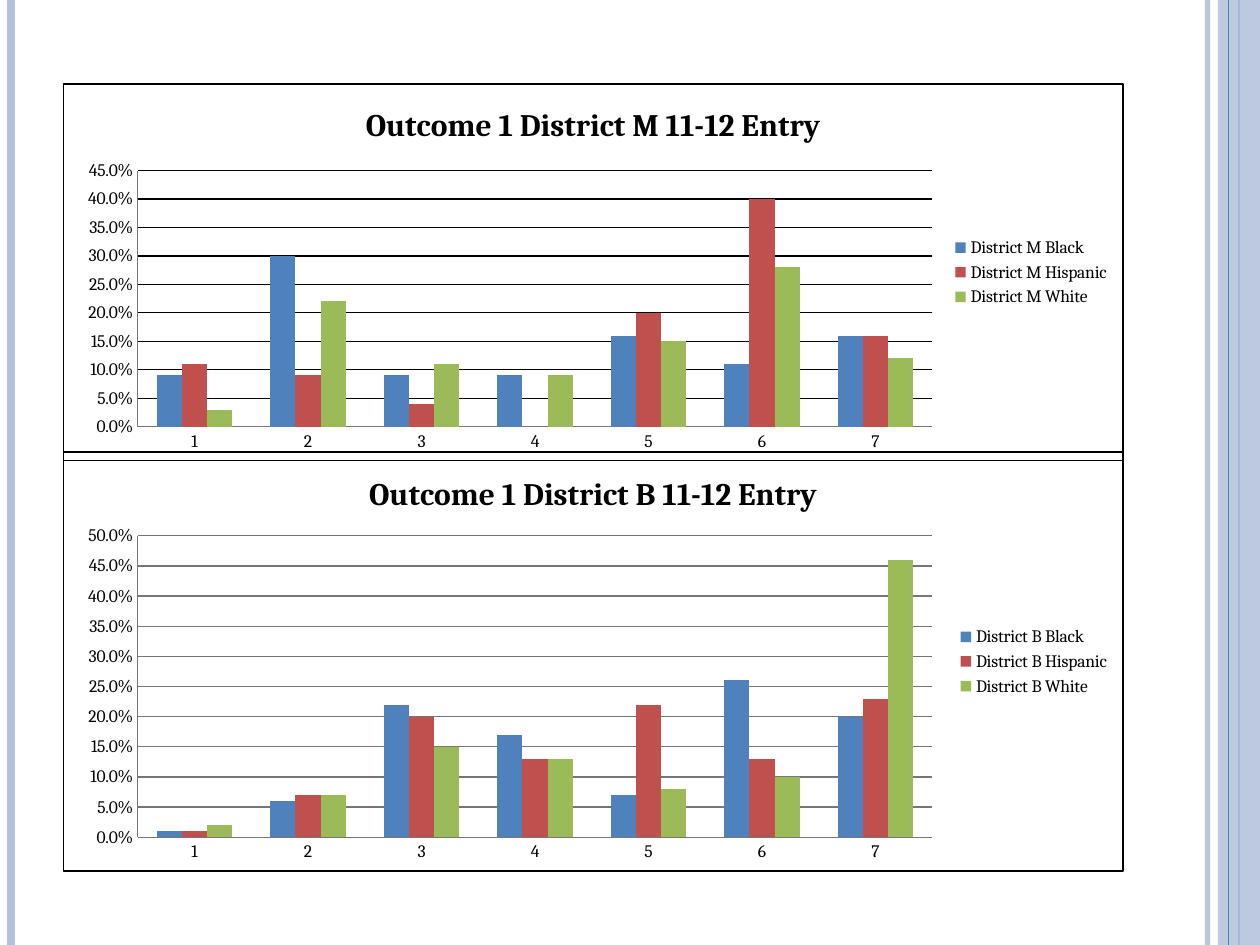
from lxml import etree
from pptx import Presentation
from pptx.chart.data import CategoryChartData
from pptx.dml.color import RGBColor
from pptx.enum.chart import XL_CHART_TYPE, XL_LEGEND_POSITION, XL_TICK_MARK
from pptx.enum.shapes import MSO_CONNECTOR, MSO_SHAPE
from pptx.oxml import parse_xml
from pptx.oxml.ns import nsdecls, qn
from pptx.util import Cm, Pt

COLUMN = XL_CHART_TYPE.COLUMN_CLUSTERED
RIGHT = XL_LEGEND_POSITION.RIGHT
NO_TICK = XL_TICK_MARK.NONE
STRAIGHT = MSO_CONNECTOR.STRAIGHT
RECT = MSO_SHAPE.RECTANGLE

WIDE, HIGH = 25.4, 19.05
PALE, BLUE, BLACK, GREY = "B3C1DB", "4F81BD", "000000", "767676"
GROUPS = {"Black": BLUE, "Hispanic": "C0504D", "White": "9BBB59"}
BODY = {"name": "Cambria", "size": Pt(10), "bold": False}
TITLE = {"name": "Cambria", "size": Pt(18), "bold": True}

# Shares by district and group, for outcomes 1 to 7
RATES = {
    "M": [
        [0.09, 0.3, 0.09, 0.09, 0.16, 0.11, 0.16],
        [0.11, 0.09, 0.04, 0, 0.2, 0.4, 0.16],
        [0.03, 0.22, 0.11, 0.09, 0.15, 0.28, 0.12],
    ],
    "B": [
        [0.01, 0.06, 0.22, 0.17, 0.07, 0.26, 0.2],
        [0.01, 0.07, 0.2, 0.13, 0.22, 0.13, 0.23],
        [0.02, 0.07, 0.15, 0.13, 0.08, 0.1, 0.46],
    ],
}


def rgb(code):
    return RGBColor.from_string(code)


def style(font, look):
    for key, value in look.items():
        setattr(font, key, value)
    font.color.rgb = rgb(BLACK)


def stroke(line, color, width):
    line.color.rgb = rgb(color)
    line.width = Pt(width)


def fade(part, percent):
    """Set the opacity of the first colour of a shape."""
    color = next(part._element.spPr.iter(qn("a:srgbClr")))
    etree.SubElement(color, qn("a:alpha"), val=str(percent * 1000))


def add_rule(slide, x, color, width):
    rule = slide.shapes.add_connector(STRAIGHT, Cm(x), 0, Cm(x), Cm(HIGH))
    stroke(rule.line, color, width)
    etree.SubElement(rule._element.spPr, qn("a:effectLst"))
    return rule


def add_frame(slide):
    """Draw the stripes at the two sides of the slide."""
    fade(add_rule(slide, 24.34, PALE, 3), 93)
    add_rule(slide, 0.22, PALE, 4.5)
    add_rule(slide, 24.98, BLUE, 1.5)
    left = 24.55
    band = slide.shapes.add_shape(RECT, Cm(left), 0, Cm(WIDE - left), Cm(HIGH))
    band.shadow.inherit = False
    band.fill.solid()
    band.fill.fore_color.rgb = rgb(PALE)
    band.line.fill.background()
    fade(band, 87)
    add_rule(slide, 24.77, BLUE, 0.75)


def set_plot(chart, plot):
    """Place the inner plot area by fractions of the chart box."""
    area = chart._chartSpace.chart.plotArea
    for old in area.findall(qn("c:layout")):
        area.remove(old)
    sizes = "".join(f'<c:{key} val="{val}"/>' for key, val in zip("xywh", plot))
    area.insert(0, parse_xml(
        f'<c:layout {nsdecls("c")}><c:manualLayout>'
        '<c:layoutTarget val="inner"/><c:xMode val="edge"/><c:yMode val="edge"/>'
        f'{sizes}</c:manualLayout></c:layout>'))


def set_border(chart):
    """Give the chart a thin black outline and no fill."""
    space = chart._chartSpace
    border = parse_xml(
        f'<c:spPr {nsdecls("c", "a")}><a:noFill/><a:ln w="{Pt(0.75)}">'
        f'<a:solidFill><a:srgbClr val="{BLACK}"/></a:solidFill></a:ln></c:spPr>')
    space.chart.addnext(border)


def add_rates(slide, box, name, top, grid, plot):
    """Draw the column chart of one district in the given box."""
    data = CategoryChartData(number_format="0.0%")
    data.categories = [str(n) for n in range(1, 8)]
    for group, rates in zip(GROUPS, RATES[name]):
        data.add_series(f"District {name} {group}", rates)
    chart = slide.shapes.add_chart(COLUMN, *map(Cm, box), data).chart
    style(chart.font, BODY)

    # Title and legend
    chart.has_title = True
    chart.chart_title.include_in_layout = False
    text = chart.chart_title.text_frame
    text.text = f"Outcome 1 District {name} 11-12 Entry"
    style(text.paragraphs[0].runs[0].font, TITLE)
    chart.has_legend = True
    chart.legend.position = RIGHT
    chart.legend.include_in_layout = False

    # Axes and grid
    for axis in (chart.category_axis, chart.value_axis):
        axis.major_tick_mark = axis.minor_tick_mark = NO_TICK
        stroke(axis.format.line, GREY, 0.75)
    scale = chart.value_axis
    scale.minimum_scale, scale.maximum_scale, scale.major_unit = 0, top, 0.05
    scale.tick_labels.number_format = "0.0%"
    scale.tick_labels.number_format_is_linked = False
    scale.has_major_gridlines = True
    stroke(scale.major_gridlines.format.line, grid, 0.75)

    # Columns
    bars = chart.plots[0]
    bars.vary_by_categories = False
    bars.gap_width, bars.overlap = 150, 0
    for series, color in zip(bars.series, GROUPS.values()):
        series.format.fill.solid()
        series.format.fill.fore_color.rgb = rgb(color)
    set_plot(chart, plot)
    set_border(chart)


def main():
    deck = Presentation()
    deck.slide_width, deck.slide_height = Cm(WIDE), Cm(HIGH)
    slide = deck.slides.add_slide(deck.slide_layouts[6])
    add_frame(slide)
    left, width = 1.27, 21.38
    add_rates(slide, (left, 1.68, width, 7.62), "M", 0.45, BLACK,
              (0.07, 0.23, 0.75, 0.68))
    add_rates(slide, (left, 9.1, width, 8.47), "B", 0.5, GREY,
              (0.07, 0.2, 0.75, 0.72))
    deck.save("out.pptx")


if __name__ == "__main__":
    main()
